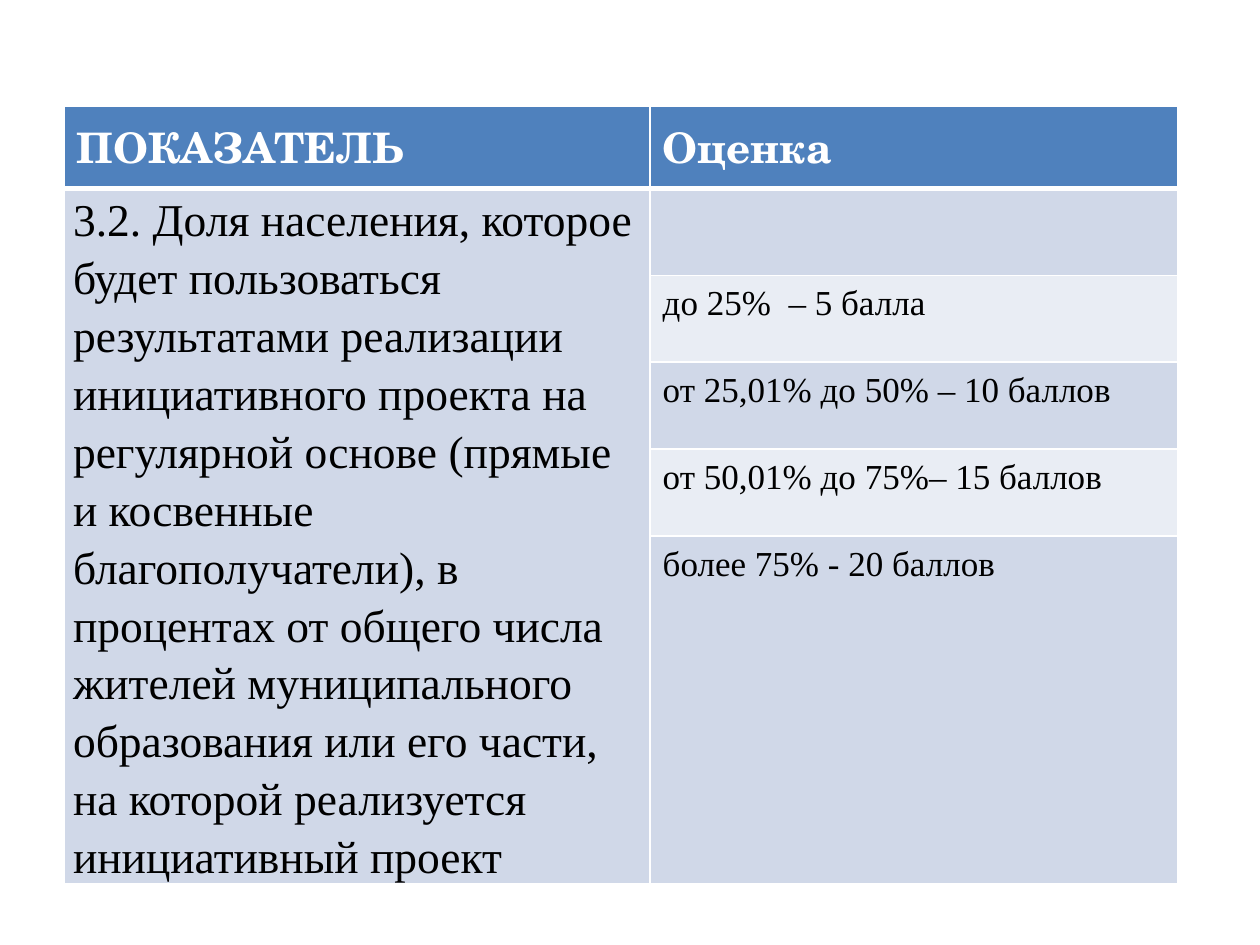
from lxml.etree import SubElement
from pptx import Presentation
from pptx.dml.color import RGBColor as Color
from pptx.oxml.ns import qn
from pptx.util import Inches, Pt

# Content
HEADINGS = ["ПОКАЗАТЕЛЬ", "Оценка"]
INDICATOR = (
    "3.2. Доля населения, которое будет пользоваться результатами реализации "
    "инициативного проекта на регулярной основе (прямые и косвенные "
    "благополучатели), в процентах от общего числа жителей муниципального "
    "образования или его части, на которой реализуется инициативный проект"
)
SCORES = [
    "",
    "до 25%  – 5 балла",
    "от 25,01% до 50% – 10 баллов",
    "от 50,01% до 75%– 15 баллов",
    "более 75% - 20 баллов",
]

THEME = {
    "header": "4F81BD",
    "bands": ["D0D8E8", "E9EDF4"],
    "border": "FFFFFF",
    "heading": ("TeX Gyre Schola", 24, "FFFFFF", True),
    "indicator": ("Times New Roman", 26, "000000", False),
    "score": ("Times New Roman", 20, "000000", False),
}
COLUMN_WIDTHS = [4.65, 4.19]
HEADER_HEIGHT, SCORE_HEIGHT = 0.54, 0.69


def style_cell(cell, fill, bottom=1):
    """Draw the cell's borders, then its fill."""
    properties = cell._tc.get_or_add_tcPr()
    for side, width in (("L", 1), ("R", 1), ("T", 1), ("B", bottom)):
        line = SubElement(properties, qn(f"a:ln{side}"), w=str(Pt(width)))
        solid = SubElement(line, qn("a:solidFill"))
        SubElement(solid, qn("a:srgbClr"), val=THEME["border"])
    cell.fill.solid()
    cell.fill.fore_color.rgb = Color.from_string(fill)


def write(cell, text, style, margins=(0.1, 0.07)):
    """Put one styled run in the cell and return its paragraph."""
    side, edge = map(Inches, margins)
    cell.margin_left = cell.margin_right = side
    cell.margin_top = cell.margin_bottom = edge
    para = cell.text_frame.paragraphs[0]
    if text:
        span = para.add_run()
        span.text = text
        name, size, color, bold = THEME[style]
        span.font.name, span.font.size, span.font.bold = name, Pt(size), bold
        span.font.color.rgb = Color.from_string(color)
    return para


def main():
    deck = Presentation()
    deck.slide_width, deck.slide_height = Inches(10), Inches(7.5)
    page = deck.slides.add_slide(deck.slide_layouts[6])

    # Table grid
    frame = page.shapes.add_table(
        len(SCORES) + 1, len(HEADINGS),
        Inches(0.51), Inches(0.84), Inches(8.83), Inches(6.48))
    table = frame.table
    for column, width in zip(table.columns, COLUMN_WIDTHS):
        column.width = Inches(width)
    for index, row in enumerate(table.rows):
        row.height = Inches(SCORE_HEIGHT if index else HEADER_HEIGHT)

    # Header row
    for column, heading in enumerate(HEADINGS):
        cell = table.cell(0, column)
        style_cell(cell, THEME["header"], bottom=3)
        write(cell, heading, "heading")

    # Score rows in alternating bands
    for index, score in enumerate(SCORES):
        style_cell(table.cell(index + 1, 0), THEME["bands"][0])
        cell = table.cell(index + 1, 1)
        style_cell(cell, THEME["bands"][index % 2])
        write(cell, score, "score")

    # Indicator beside all the scores
    indicator = table.cell(1, 0)
    indicator.merge(table.cell(len(SCORES), 0))
    para = write(indicator, INDICATOR, "indicator", margins=(0.07, 0))
    para.line_spacing = 1.15
    para.space_after = Pt(10)

    deck.save("out.pptx")


if __name__ == "__main__":
    main()
